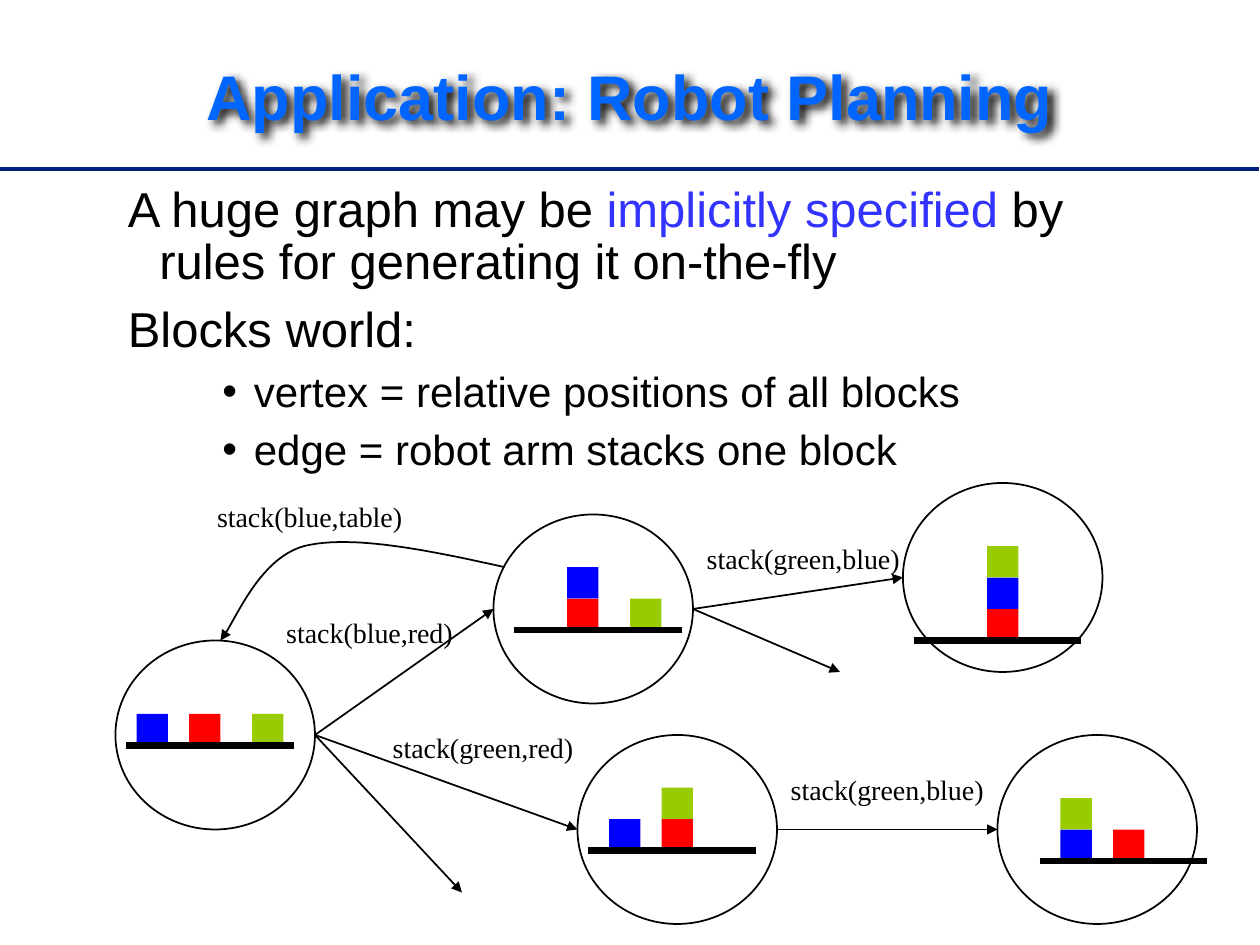
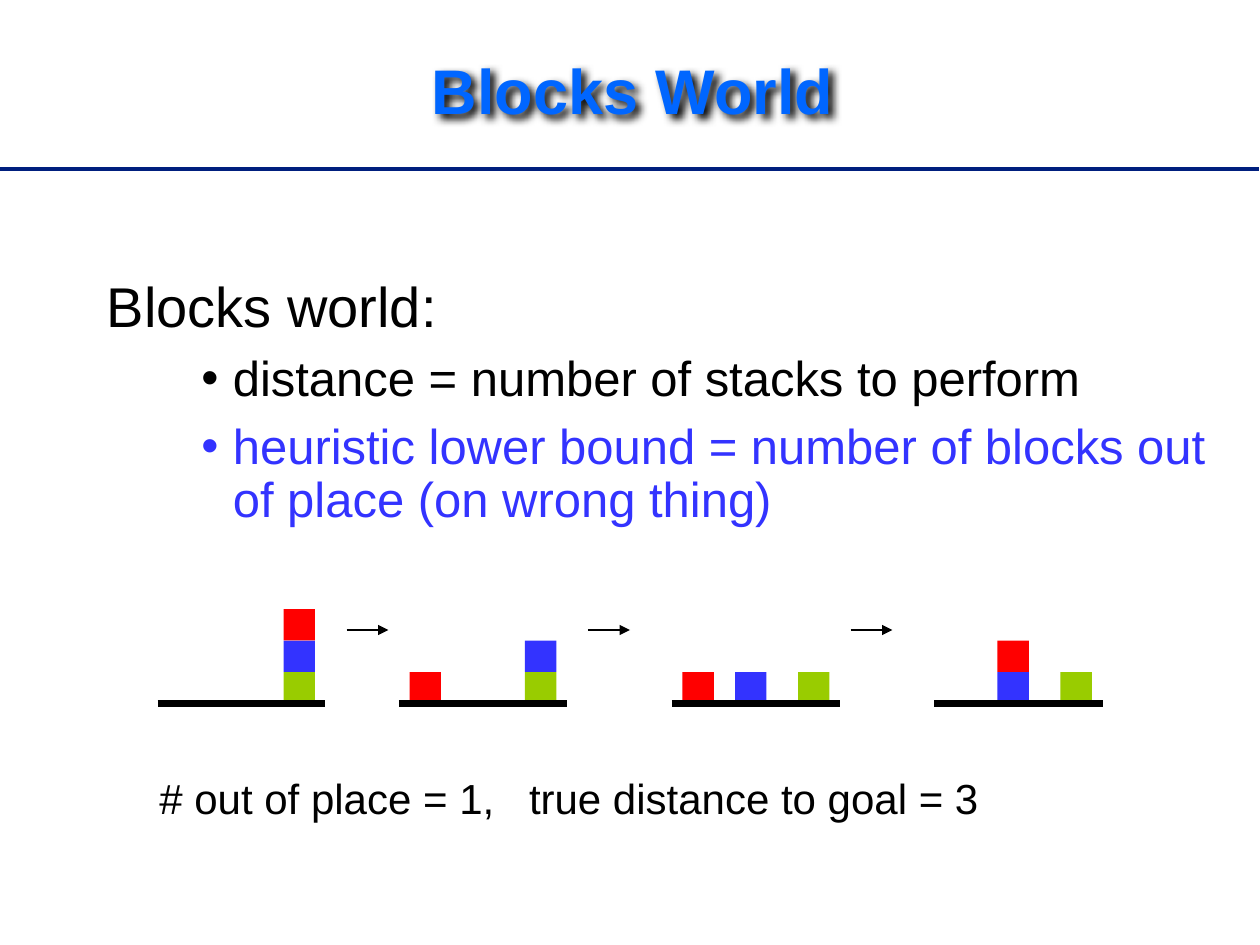
import pptx
import pptx.dml.color
import pptx.enum.shapes
import pptx.enum.text
import pptx.oxml
import pptx.oxml.ns
import pptx.util

EMU_PER_PX = 7620
BLOCK = 30
TABLE_LENGTH = 160
CIRCLE = (190, 180)
BLACK, WHITE, ACCENT = "000000", "FFFFFF", "3333FF"
TITLE_BLUE, RULE_BLUE = "0066FF", "001F7E"
RED, GREEN, BLUE = "FF0000", "99CC00", "0000FF"
CENTER = pptx.enum.text.PP_ALIGN.CENTER
SHAPES = pptx.enum.shapes.MSO_SHAPE
TITLE_SHADOW = (
    '<a:effectLst {}><a:outerShdw blurRad="63500" dist="38100" dir="2700000">'
    '<a:srgbClr val="000000"/></a:outerShdw></a:effectLst>'
)


def px(length):
    return pptx.util.Emu(round(length * EMU_PER_PX))


def color(hex_code):
    return pptx.dml.color.RGBColor.from_string(hex_code)


def apply_format(target, values):
    for name, value in values.items():
        setattr(target, name, value)


def append_xml(parent, template):
    parent.append(pptx.oxml.parse_xml(template.format(pptx.oxml.ns.nsdecls("a"))))


def style_line(shape, hex_code=BLACK, width=1, arrow=False):
    shape.line.color.rgb = color(hex_code)
    shape.line.width = pptx.util.Pt(width)
    if arrow:
        outline = shape.element.spPr.find(pptx.oxml.ns.qn("a:ln"))
        append_xml(outline, '<a:tailEnd {} type="triangle"/>')


def add_line(page, start, end, **style):
    line = page.shapes.add_connector(
        pptx.enum.shapes.MSO_CONNECTOR.STRAIGHT, *map(px, start + end))
    style_line(line, **style)
    append_xml(line.element.spPr, "<a:effectLst {}/>")


def add_solid(page, kind, area, fill):
    shape = page.shapes.add_shape(kind, *map(px, area))
    shape.shadow.inherit = False
    shape.fill.solid()
    shape.fill.fore_color.rgb = color(fill)
    shape.line.fill.background()
    return shape


def add_circle(page, left, top):
    style_line(add_solid(page, SHAPES.OVAL, (left, top, *CIRCLE), WHITE))


def add_blocks(page, left, table_top, stacks):
    for offset, fills in stacks.items():
        for level, fill in enumerate(fills, start=1):
            area = (left + offset, table_top - level * BLOCK, BLOCK, BLOCK)
            add_solid(page, SHAPES.RECTANGLE, area, fill)
    add_line(page, (left, table_top), (left + TABLE_LENGTH, table_top), width=3.5)


def bezier_points(start, control_1, control_2, end, steps=24):
    for step in range(1, steps + 1):
        t = step / steps
        weights = ((1 - t) ** 3, 3 * t * (1 - t) ** 2, 3 * t * t * (1 - t), t ** 3)
        points = (start, control_1, control_2, end)
        yield tuple(px(sum(w * p[axis] for w, p in zip(weights, points)))
                    for axis in (0, 1))


def add_curve(page, start, *segments):
    builder = page.shapes.build_freeform(*map(px, start))
    points = []
    for segment in segments:
        points.extend(bezier_points(start, *segment))
        start = segment[-1]
    builder.add_line_segments(points, close=False)
    curve = builder.convert_to_shape()
    curve.shadow.inherit = False
    curve.fill.background()
    style_line(curve, arrow=True)


def add_box(page, area, **frame_format):
    box = page.shapes.add_textbox(*map(px, area))
    apply_format(box.text_frame, {"word_wrap": True, **frame_format})
    return box


def add_span(para, text, size, hex_code=BLACK, font="Arial", bold=False):
    span = para.add_run()
    span.text = text
    apply_format(span.font, {"name": font, "size": pptx.util.Pt(size), "bold": bold})
    span.font.color.rgb = color(hex_code)


def add_title(page, area, text):
    add_line(page, (0, 161), (1199, 161), hex_code=RULE_BLUE, width=2)
    box = add_box(page, area, vertical_anchor=pptx.enum.text.MSO_ANCHOR.MIDDLE)
    append_xml(box.element.spPr, TITLE_SHADOW)
    para = box.text_frame.paragraphs[0]
    apply_format(para, {"alignment": CENTER, "line_spacing": 0.9})
    add_span(para, text, 36, TITLE_BLUE, bold=True)


def add_body(page, area, items):
    frame = add_box(page, area).text_frame
    for index, (size, bulleted, spans) in enumerate(items):
        para = frame.add_paragraph() if index else frame.paragraphs[0]
        apply_format(para, {"line_spacing": 0.9,
                            "space_before": pptx.util.Pt(size * 0.3)})
        properties = para._p.get_or_add_pPr()
        properties.set("marL", str(px(120 if bulleted else 30)))
        properties.set("indent", str(px(-30)))
        if bulleted:
            append_xml(properties, '<a:buFont {} typeface="Arial"/>')
            append_xml(properties, '<a:buChar {} char="•"/>')
        for text, hex_code in spans:
            add_span(para, text, size, hex_code)


def add_label(page, left, top, width, text):
    frame = add_box(page, (left, top, width, 44), word_wrap=False).text_frame
    frame.paragraphs[0].alignment = CENTER
    add_span(frame.paragraphs[0], text, 16, font="Times New Roman")


def add_page(deck):
    return deck.slides.add_slide(deck.slide_layouts[6])


def build_robot_planning(page):
    add_title(page, (90, 20, 1020, 150), "Application: Robot Planning")
    add_body(page, (110, 170, 1020, 260), [
        (28, False, [("A huge graph may be ", BLACK),
                     ("implicitly specified", ACCENT),
                     (" by rules for generating it on-the-fly", BLACK)]),
        (28, False, [("Blocks world:", BLACK)]),
        (24, True, [("vertex = relative positions of all blocks", BLACK)]),
        (24, True, [("edge = robot arm stacks one block", BLACK)]),
    ])
    states = [
        ((110, 610), (120, 710), {10: [BLUE], 60: [RED], 120: [GREEN]}),
        ((470, 490), (490, 600), {50: [RED, BLUE], 110: [GREEN]}),
        ((860, 460), (870, 610), {70: [RED, BLUE, GREEN]}),
        ((550, 700), (560, 810), {20: [BLUE], 70: [RED, GREEN]}),
        ((950, 700), (990, 820), {20: [BLUE, GREEN], 70: [RED]}),
    ]
    for circle, table, stacks in states:
        add_circle(page, *circle)
        add_blocks(page, *table, stacks)
    edges = {
        (300, 700): [(470, 580), (550, 790), (440, 850)],
        (660, 580): [(860, 550), (800, 640)],
        (740, 790): [(950, 790)],
    }
    for start, ends in edges.items():
        for end in ends:
            add_line(page, start, end, arrow=True)
    add_curve(page, (480, 540),
              ((408, 524), (335, 509), (290, 520)),
              ((245, 532), (223, 595), (210, 610)))
    for label in [
        (260, 580, 184, "stack(blue,red)"),
        (360, 690, 200, "stack(green,red)"),
        (660, 510, 210, "stack(green,blue)"),
        (180, 470, 230, "stack(blue,table)"),
        (720, 730, 250, "stack(green,blue)"),
    ]:
        add_label(page, *label)


def build_blocks_world(page):
    add_title(page, (131, 30, 943, 119), "Blocks World")
    add_body(page, (90, 260, 1070, 280), [
        (32, False, [("Blocks world:", BLACK)]),
        (28, True, [("distance = number of stacks to perform", BLACK)]),
        (28, True, [("heuristic lower bound = number of blocks "
                     "out of place (on wrong thing)", ACCENT)]),
    ])
    states = {
        150: {120: [GREEN, ACCENT, RED]},
        380: {10: [RED], 120: [GREEN, ACCENT]},
        640: {10: [RED], 60: [ACCENT], 120: [GREEN]},
        890: {60: [ACCENT, RED], 120: [GREEN]},
    }
    for left, stacks in states.items():
        add_blocks(page, left, 670, stacks)
    for left in (330, 560, 810):
        add_line(page, (left, 600), (left + 40, 600), arrow=True)
    para = add_box(page, (140, 730, 920, 60)).text_frame.paragraphs[0]
    tab_stop = f'<a:tab pos="{px(352)}" algn="l"/>'
    append_xml(para._p.get_or_add_pPr(), "<a:tabLst {}>" + tab_stop + "</a:tabLst>")
    add_span(para, "# out of place = 1,\ttrue distance to goal = 3", 24)


def main():
    deck = pptx.Presentation()
    apply_format(deck, {"slide_width": px(1200), "slide_height": px(900)})
    build_robot_planning(add_page(deck))
    build_blocks_world(add_page(deck))
    deck.save("out.pptx")


if __name__ == "__main__":
    main()
